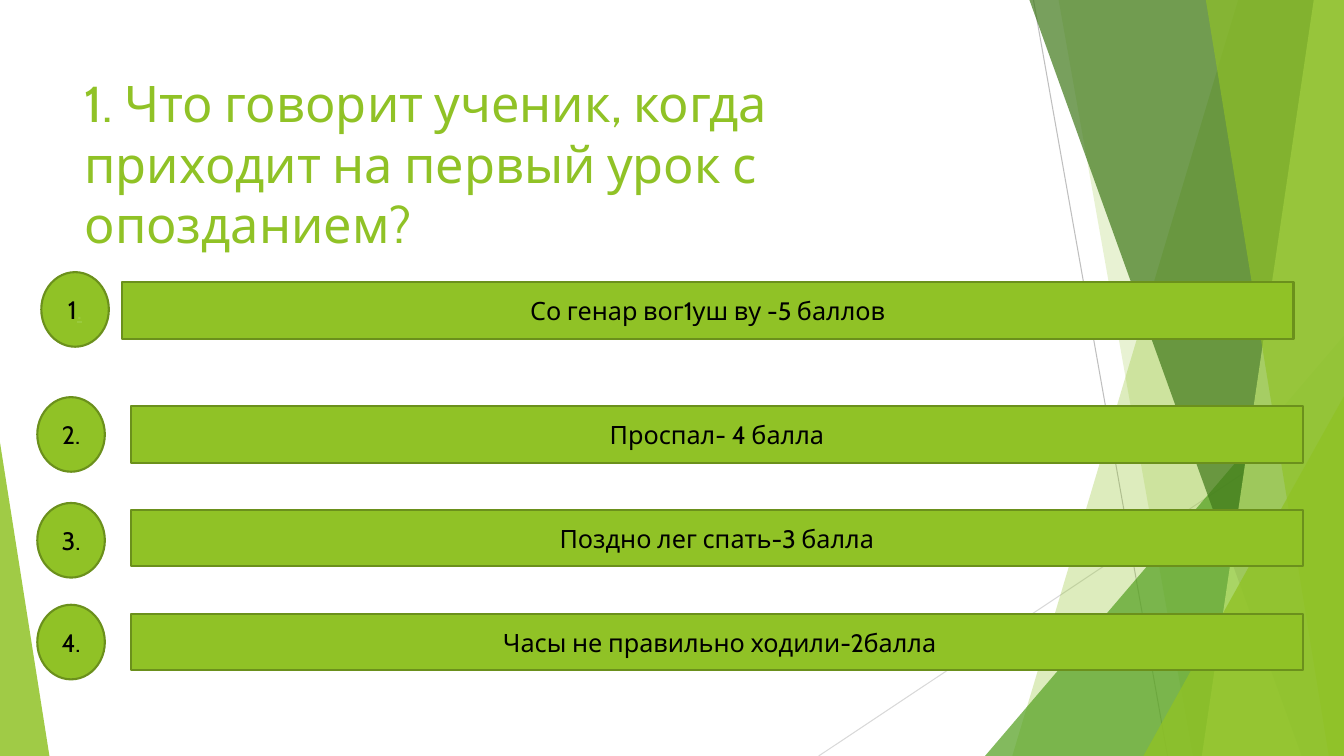
from lxml import etree
from pptx import Presentation
from pptx import util as u
from pptx.dml.color import RGBColor
from pptx.enum import shapes, text
from pptx.oxml.ns import qn

COLORS = {
    "lime": "90C226", "border": "6B901C", "green": "54A021", "dark": "3F7819",
    "pale": "C0E474", "link": "99CA3C", "black": "000000",
    "gray": "BFBFBF", "light gray": "D9D9D9",
}
FONT = "Cabin"
WIDTH, HEIGHT = 13.33, 7.5


class SlideBuilder:
    def __init__(self, slide):
        self.shapes = slide.shapes

    def color(self, name):
        return RGBColor.from_string(COLORS[name])

    def box(self, *lengths):
        return [u.Inches(length) for length in lengths]

    def style(self, shape, fill, opacity=100, border=None):
        shape.shadow.inherit = False
        shape.fill.solid()
        shape.fill.fore_color.rgb = self.color(fill)
        if opacity < 100:
            color = shape.fill._xPr.find(qn("a:solidFill"))[0]
            etree.SubElement(color, qn("a:alpha"), val=str(opacity * 1000))
        if border:
            shape.line.color.rgb = self.color(border)
            shape.line.width = u.Pt(1.5)
        else:
            shape.line.fill.background()

    def format_run(self, run, size, color):
        run.font.name = FONT
        run.font.size = u.Pt(size)
        run.font.color.rgb = self.color(color)

    def line(self, start, end, color):
        line = self.shapes.add_connector(
            shapes.MSO_CONNECTOR.STRAIGHT, *self.box(*start, *end))
        line.line.color.rgb = self.color(color)
        line.line.width = u.Pt(0.75)
        etree.SubElement(line._element.spPr, qn("a:effectLst"))

    def band(self, top_left, bottom_left, fill, opacity):
        """Fill from a slanted left edge to the right side of the slide."""
        builder = self.shapes.build_freeform(*self.box(top_left, 0))
        corners = [(WIDTH, 0), (WIDTH, HEIGHT), (bottom_left, HEIGHT)]
        builder.add_line_segments([self.box(*corner) for corner in corners])
        self.style(builder.convert_to_shape(), fill, opacity)

    def triangle(self, left, top, width, apex, fill, opacity):
        shape = self.shapes.add_shape(
            shapes.MSO_SHAPE.ISOSCELES_TRIANGLE,
            *self.box(left, top, width, HEIGHT - top))
        shape.adjustments[0] = apex
        self.style(shape, fill, opacity)

    def label(self, kind, left, top, width, height, wording):
        shape = self.shapes.add_shape(kind, *self.box(left, top, width, height))
        self.style(shape, "lime", border="border")
        frame = shape.text_frame
        frame.vertical_anchor = text.MSO_ANCHOR.MIDDLE
        frame.text = wording
        paragraph = frame.paragraphs[0]
        paragraph.alignment = text.PP_ALIGN.CENTER
        self.format_run(paragraph.runs[0], 18, "black")
        return paragraph

    def title(self, left, top, width, height, wording):
        frame = self.shapes.add_textbox(
            *self.box(left, top, width, height)).text_frame
        frame.word_wrap = True
        frame.text = wording
        self.format_run(frame.paragraphs[0].runs[0], 36, "lime")


def main():
    presentation = Presentation()
    presentation.slide_width = u.Inches(WIDTH)
    presentation.slide_height = u.Inches(HEIGHT)
    builder = SlideBuilder(
        presentation.slides.add_slide(presentation.slide_layouts[6]))

    # Background facets
    builder.line((10.25, 0), (11.58, HEIGHT), "gray")
    builder.line((WIDTH, 4.03), (8.12, HEIGHT), "light gray")
    builder.band(12.28, 10.04, "lime", 30)
    builder.band(10.5, 11.83, "lime", 20)
    builder.triangle(9.77, 3.33, 3.56, 1, "green", 72)
    builder.band(10.21, 12.91, "dark", 70)
    builder.band(13.03, 11.92, "pale", 70)
    builder.band(11.96, 13.18, "lime", 65)
    builder.triangle(11.34, 3.93, 1.99, 1, "lime", 80)
    builder.triangle(0, 4.39, 0.49, 0, "lime", 85)

    # Answers: number left and top, bar left and top, number, wording
    answers = [
        (0.41, 2.7, 1.21, 2.8, "1", "Со генар вог1уш ву -5 баллов"),
        (0.37, 3.94, 1.3, 4.03, "2.", "Проспал- 4 балла"),
        (0.37, 4.99, 1.3, 5.06, "3.", "Поздно лег спать-3 балла"),
        (0.37, 6, 1.3, 6.09, "4.", " Часы не правильно ходили-2балла"),
    ]
    numbers = []
    for number_left, number_top, bar_left, bar_top, number, wording in answers:
        numbers.append(builder.label(
            shapes.MSO_SHAPE.OVAL, number_left, number_top, 0.67, 0.74, number))
        builder.label(
            shapes.MSO_SHAPE.RECTANGLE, bar_left, bar_top, 11.62, 0.56, wording)

    # Underlined dot after the first number
    dot = numbers[0].add_run()
    dot.text = "."
    builder.format_run(dot, 18, "link")
    dot.font.underline = True

    # Question
    builder.title(
        0.74, 0.67, 9.4, 1.44,
        "1. Что говорит ученик, когда приходит на первый урок с опозданием?")

    presentation.save("out.pptx")


if __name__ == "__main__":
    main()
